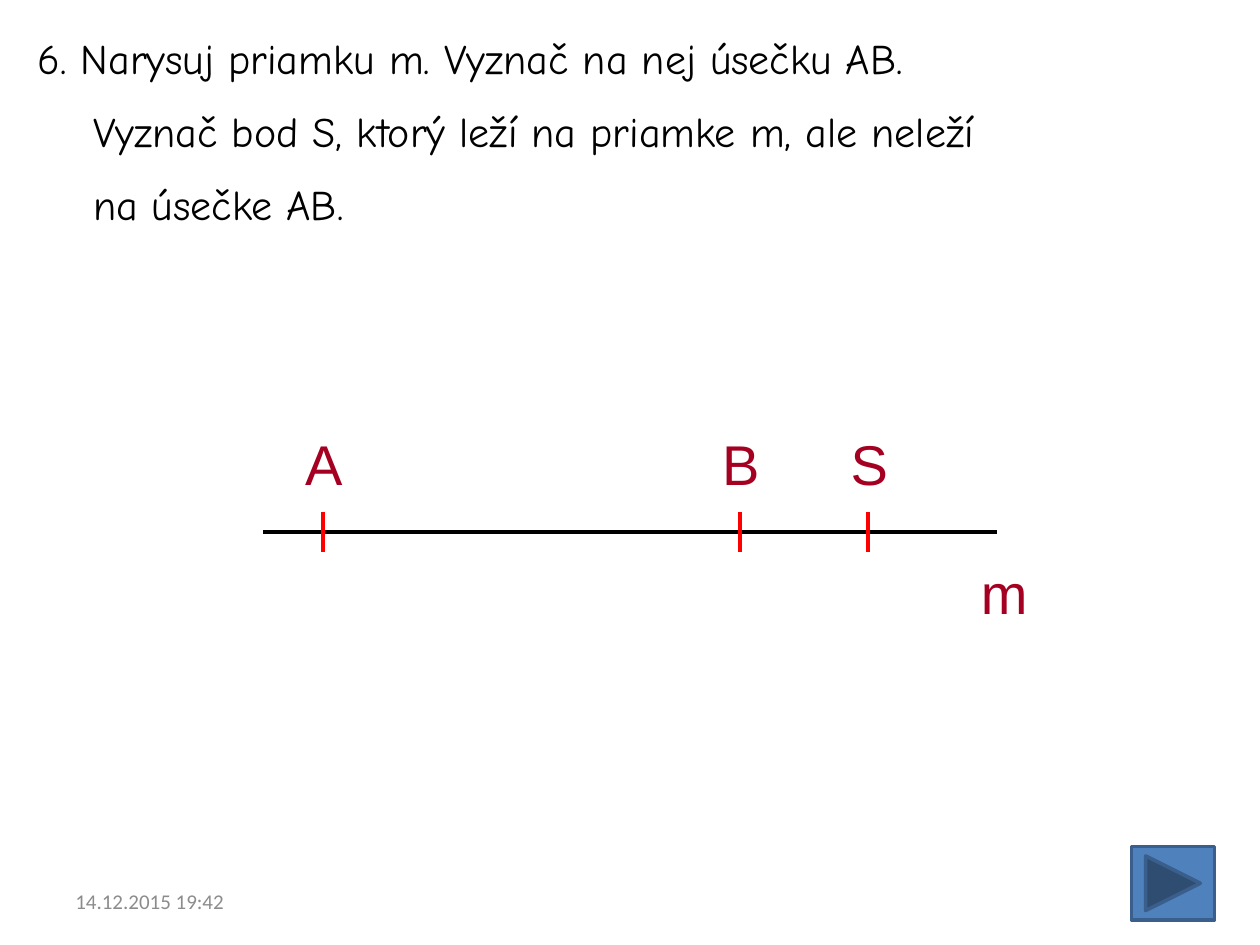
from dataclasses import dataclass

from lxml import etree
from pptx import Presentation
from pptx.dml.color import RGBColor
from pptx.enum.shapes import MSO_CONNECTOR, MSO_SHAPE
from pptx.enum.text import MSO_ANCHOR, MSO_AUTO_SIZE, PP_ALIGN
from pptx.oxml.ns import qn
from pptx.util import Inches, Pt


@dataclass(frozen=True)
class Theme:
    black: str = "000000"
    label: str = "A50021"
    tick: str = "FF0000"
    muted: str = "8C8C8C"
    button: str = "4F81BD"
    button_edge: str = "3A5F8C"
    task_font: str = "Comic Neue"
    label_font: str = "Arial"
    date_font: str = "Calibri"
    task_size: int = 24
    label_size: int = 32
    date_size: int = 12
    line_width: float = 2.25


THEME = Theme()


def add_text(slide, box, lines, *, font, size, color, align=PP_ALIGN.LEFT,
             anchor=MSO_ANCHOR.TOP, wrap=True, grow=True, space_before=0, hanging=0):
    """Place lines as paragraphs; lines after the first are indented by hanging inches."""
    frame = slide.shapes.add_textbox(*map(Inches, box)).text_frame
    frame.word_wrap = wrap
    frame.auto_size = MSO_AUTO_SIZE.SHAPE_TO_FIT_TEXT if grow else MSO_AUTO_SIZE.NONE
    frame.vertical_anchor = anchor
    for index, line in enumerate(lines):
        paragraph = frame.add_paragraph() if index else frame.paragraphs[0]
        paragraph.alignment = align
        paragraph.space_before = Pt(space_before)
        if index and hanging:
            paragraph._p.get_or_add_pPr().set("marL", str(Inches(hanging)))
        run = paragraph.add_run()
        run.text = line
        run.font.name = font
        run.font.size = Pt(size)
        run.font.color.rgb = RGBColor.from_string(color)


def add_line(slide, start, end, color):
    line = slide.shapes.add_connector(MSO_CONNECTOR.STRAIGHT, *map(Inches, start + end))
    line.line.color.rgb = RGBColor.from_string(color)
    line.line.width = Pt(THEME.line_width)
    etree.SubElement(line._element.spPr, qn("a:effectLst"))


def add_task(slide, box):
    lines = [
        "6. Narysuj priamku m. Vyznač na nej úsečku AB.",
        "Vyznač bod S, ktorý leží na priamke m, ale neleží",
        "na úsečke AB.",
    ]
    add_text(slide, box, lines, font=THEME.task_font, size=THEME.task_size,
             color=THEME.black, space_before=13, hanging=0.44)


def add_label(slide, text, center, top, width=0.5):
    add_text(slide, (center - width / 2, top, width, 0.64), [text],
             font=THEME.label_font, size=THEME.label_size, color=THEME.label,
             align=PP_ALIGN.CENTER, wrap=False)


def add_number_line(slide, box):
    """Draw line m with its marked points; the line lies 0.86 below the box top."""
    left, top, width, _ = box
    line_y = top + 0.86
    add_line(slide, (left, line_y), (left + width, line_y), THEME.black)
    add_label(slide, "m", left + width + 0.06, line_y + 0.16, width=0.58)
    for name, offset in {"A": 0.47, "B": 3.78, "S": 4.8}.items():
        x = left + offset
        add_label(slide, name, x + 0.01, top)
        add_line(slide, (x, line_y - 0.16), (x, line_y + 0.16), THEME.tick)


def add_next_button(slide, box):
    button = slide.shapes.add_shape(MSO_SHAPE.ACTION_BUTTON_FORWARD_OR_NEXT,
                                    *map(Inches, box))
    button.shadow.inherit = False
    button.fill.solid()
    button.fill.fore_color.rgb = RGBColor.from_string(THEME.button)
    button.line.color.rgb = RGBColor.from_string(THEME.button_edge)
    button.line.width = Pt(2)


def add_date(slide, box):
    add_text(slide, box, ["14.12.2015 19:42"], font=THEME.date_font,
             size=THEME.date_size, color=THEME.muted,
             anchor=MSO_ANCHOR.MIDDLE, grow=False)


def main():
    presentation = Presentation()
    presentation.slide_width = Inches(10)
    presentation.slide_height = Inches(7.5)
    slide = presentation.slides.add_slide(presentation.slide_layouts[6])
    add_task(slide, (0.2, 0.21, 9.8, 1.72))
    add_number_line(slide, (2.09, 3.36, 5.82, 1.66))
    add_next_button(slide, (8.98, 6.72, 0.66, 0.58))
    add_date(slide, (0.5, 6.95, 2.33, 0.4))
    presentation.save("out.pptx")


if __name__ == "__main__":
    main()
